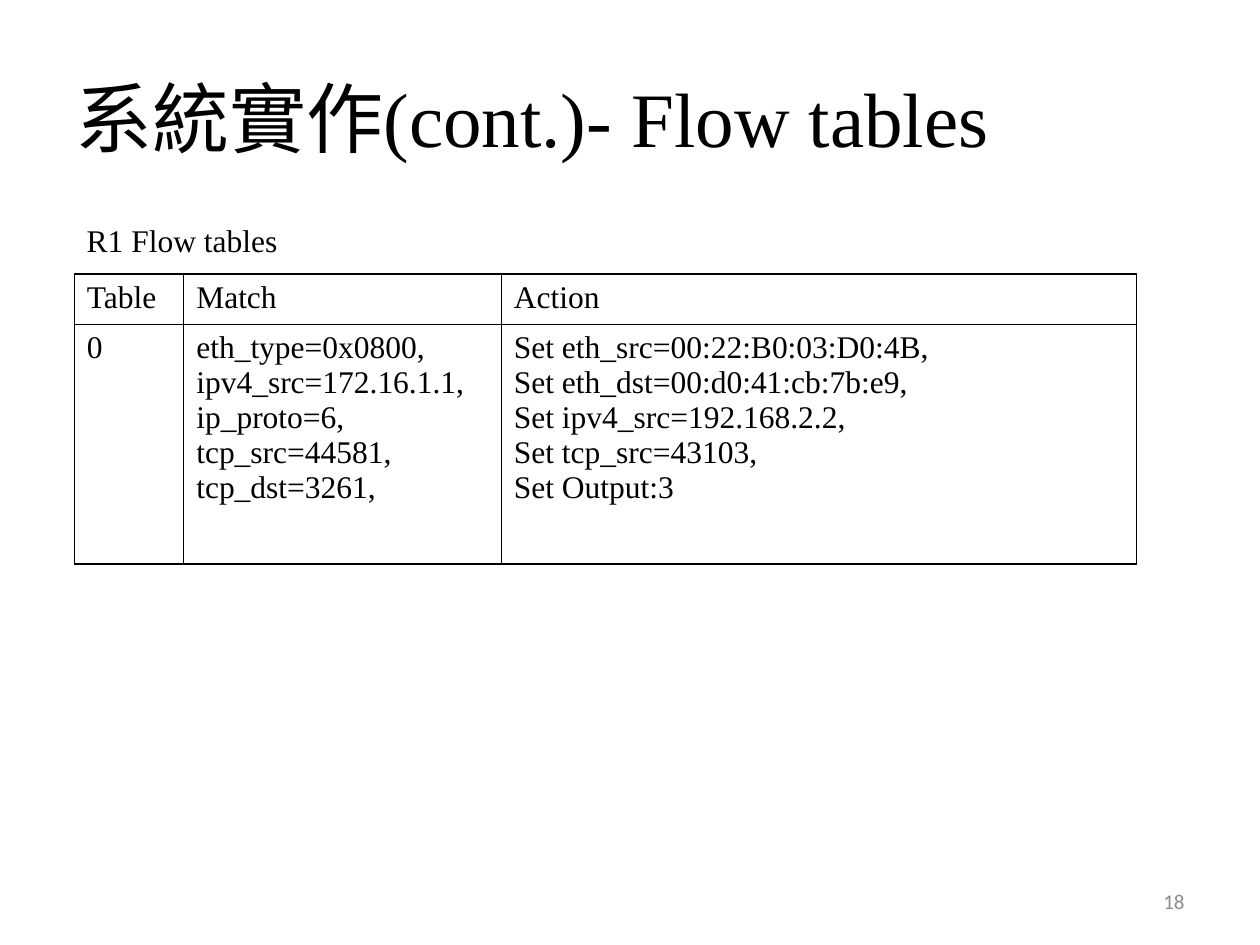
"""Build the flow tables slide."""
from dataclasses import dataclass

from lxml import etree
from pptx import Presentation
from pptx import util as u
from pptx.dml.color import RGBColor
from pptx.enum import text
from pptx.oxml import ns

WIDTH, HEIGHT = 10, 7.5


@dataclass(frozen=True)
class Theme:
    serif: str = "Times New Roman"
    sans: str = "Calibri"
    ink: str = "000000"
    muted: str = "8C8C8C"
    title: int = 44
    body: int = 18
    footer: int = 12
    border: int = 1


@dataclass(frozen=True)
class Box:
    """Position and size as shares of the slide."""
    left: float
    top: float
    width: float
    height: float

    def emu(self) -> tuple:
        return (u.Inches(self.left * WIDTH), u.Inches(self.top * HEIGHT),
                u.Inches(self.width * WIDTH), u.Inches(self.height * HEIGHT))


@dataclass(frozen=True)
class Label:
    words: str
    box: Box
    size: int
    font: str = Theme.serif
    color: str = Theme.ink
    align: text.PP_ALIGN = text.PP_ALIGN.LEFT
    anchor: text.MSO_ANCHOR = text.MSO_ANCHOR.MIDDLE
    wrap: bool = True


THEME = Theme()
LABELS = (
    Label("系統實作(cont.)- Flow tables", Box(0.05, 0.04, 0.9, 0.167), THEME.title),
    Label("18", Box(0.717, 0.927, 0.233, 0.053), THEME.footer, THEME.sans,
          THEME.muted, text.PP_ALIGN.RIGHT),
    Label("R1 Flow tables", Box(0.059, 0.227, 0.173, 0.053), THEME.body,
          anchor=text.MSO_ANCHOR.TOP, wrap=False),
)
TABLE_BOX = Box(0.059, 0.29, 0.843, 0.307)
COLUMN_SHARES = (0.103, 0.299, 0.598)
ROW_SHARES = (0.174, 0.826)
FLOWS = (
    ("Table", "Match", "Action"),
    ("0",
     "eth_type=0x0800,\nipv4_src=172.16.1.1,\nip_proto=6,\n"
     "tcp_src=44581,\ntcp_dst=3261,",
     "Set eth_src=00:22:B0:03:D0:4B,\nSet eth_dst=00:d0:41:cb:7b:e9,\n"
     "Set ipv4_src=192.168.2.2,\nSet tcp_src=43103,\nSet Output:3"),
)


def write(tf, words: str, size: int, font: str, color: str, align=None) -> None:
    tf.text = words
    for p in tf.paragraphs:
        p.alignment = align
        p.font.size = u.Pt(size)
        p.font.name = font
        p.font.color.rgb = RGBColor.from_string(color)


def add_label(s, label: Label) -> None:
    tf = s.shapes.add_textbox(*label.box.emu()).text_frame
    tf.word_wrap = label.wrap
    tf.vertical_anchor = label.anchor
    write(tf, label.words, label.size, label.font, label.color, label.align)


def add_borders(cell) -> None:
    props = cell._tc.get_or_add_tcPr()
    for index, side in enumerate(("lnL", "lnR", "lnT", "lnB")):
        line = etree.Element(ns.qn(f"a:{side}"), w=str(u.Pt(THEME.border)))
        fill = etree.SubElement(line, ns.qn("a:solidFill"))
        etree.SubElement(fill, ns.qn("a:srgbClr"), val=THEME.ink)
        props.insert(index, line)


def add_flow_table(s, box: Box, rows: tuple) -> None:
    left, top, width, height = box.emu()
    table = s.shapes.add_table(len(rows), len(rows[0]), left, top, width, height).table
    table.first_row = table.horz_banding = False
    for column, share in zip(table.columns, COLUMN_SHARES):
        column.width = int(width * share)
    for row, share, values in zip(table.rows, ROW_SHARES, rows):
        row.height = int(height * share)
        for cell, words in zip(row.cells, values):
            write(cell.text_frame, words, THEME.body, THEME.serif, THEME.ink)
            cell.fill.background()
            add_borders(cell)


def main() -> None:
    prs = Presentation()
    prs.slide_width, prs.slide_height = u.Inches(WIDTH), u.Inches(HEIGHT)
    s = prs.slides.add_slide(prs.slide_layouts[6])
    for label in LABELS:
        add_label(s, label)
    add_flow_table(s, TABLE_BOX, FLOWS)
    prs.save("out.pptx")


if __name__ == "__main__":
    main()
